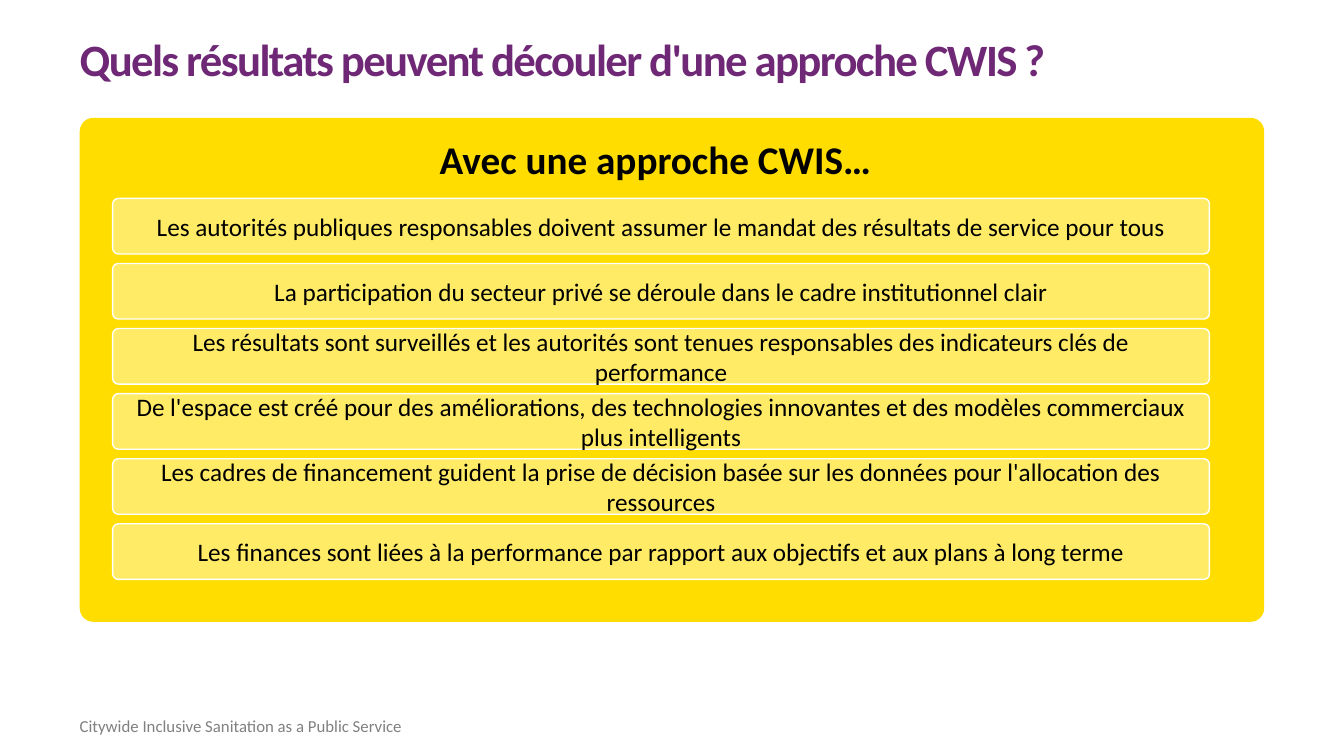
from pptx import Presentation
from pptx import util as u
from pptx.dml.color import RGBColor
from pptx.enum import shapes, text

COLORS = {
    "title": "6F2875",
    "panel": "FFDD00",
    "bar": "FFEB66",
    "outline": "FFFFFF",
    "body": "000000",
    "footer": "808080",
}
OUTCOMES = [
    "Les autorités publiques responsables doivent assumer le mandat des résultats de service pour tous",
    "La participation du secteur privé se déroule dans le cadre institutionnel clair",
    "Les résultats sont surveillés et les autorités sont tenues responsables des indicateurs clés de performance",
    "De l'espace est créé pour des améliorations, des technologies innovantes et des modèles commerciaux plus intelligents",
    "Les cadres de financement guident la prise de décision basée sur les données pour l'allocation des ressources",
    "Les finances sont liées à la performance par rapport aux objectifs et aux plans à long terme",
]
LEFT = 2.01
BAR_TOP, BAR_HEIGHT, BAR_PITCH = 5.0, 1.4, 1.64


def write(holder, wording, size, color, inset=0, bold=False, centred=False, spacing=None):
    frame = holder.text_frame
    frame.word_wrap = True
    frame.margin_left = frame.margin_right = u.Cm(inset)
    frame.margin_top = frame.margin_bottom = u.Cm(inset)
    frame.vertical_anchor = text.MSO_ANCHOR.MIDDLE if centred else text.MSO_ANCHOR.TOP
    line = frame.paragraphs[0]
    line.text = wording
    line.alignment = text.PP_ALIGN.CENTER if centred else text.PP_ALIGN.LEFT
    line.line_spacing = spacing
    line.font.name = "Calibri"
    line.font.size = u.Pt(size)
    line.font.bold = bold
    line.font.color.rgb = RGBColor.from_string(COLORS[color])
    return line


def add_rounded(left, top, width, height, fill, radius):
    box = slide.shapes.add_shape(
        shapes.MSO_SHAPE.ROUNDED_RECTANGLE, u.Cm(left), u.Cm(top), u.Cm(width), u.Cm(height)
    )
    box.adjustments[0] = radius
    box.shadow.inherit = False
    box.fill.solid()
    box.fill.fore_color.rgb = RGBColor.from_string(COLORS[fill])
    box.line.fill.background()
    return box


prs = Presentation()
prs.slide_width = u.Cm(33.87)
prs.slide_height = u.Cm(19.05)
slide = prs.slides.add_slide(prs.slide_layouts[6])

footer = slide.shapes.add_textbox(u.Cm(LEFT), u.Cm(18.03), u.Cm(18.85), u.Cm(0.97))
write(footer, "Citywide Inclusive Sanitation as a Public Service", 12, "footer")

title = slide.shapes.add_textbox(u.Cm(LEFT), u.Cm(1.02), u.Cm(26.31), u.Cm(1.45))
question = write(
    title, "Quels résultats peuvent découler d'une approche CWIS ?", 32, "title", bold=True, spacing=0.85
)
question.runs[0]._r.get_or_add_rPr().set("spc", "-120")

add_rounded(LEFT, 2.97, 29.85, 12.7, "panel", 0.027)

heading = slide.shapes.add_textbox(u.Cm(LEFT), u.Cm(3.38), u.Cm(29.01), u.Cm(1.4))
write(heading, "Avec une approche CWIS…", 28, "body", inset=0.33, bold=True, centred=True, spacing=0.9)

for row, outcome in enumerate(OUTCOMES):
    bar = add_rounded(2.84, BAR_TOP + row * BAR_PITCH, 27.64, BAR_HEIGHT, "bar", 0.1)
    bar.line.color.rgb = RGBColor.from_string(COLORS["outline"])
    bar.line.width = u.Pt(1)
    write(bar, outcome, 18, "body", inset=0.25, centred=True)

prs.save("out.pptx")
